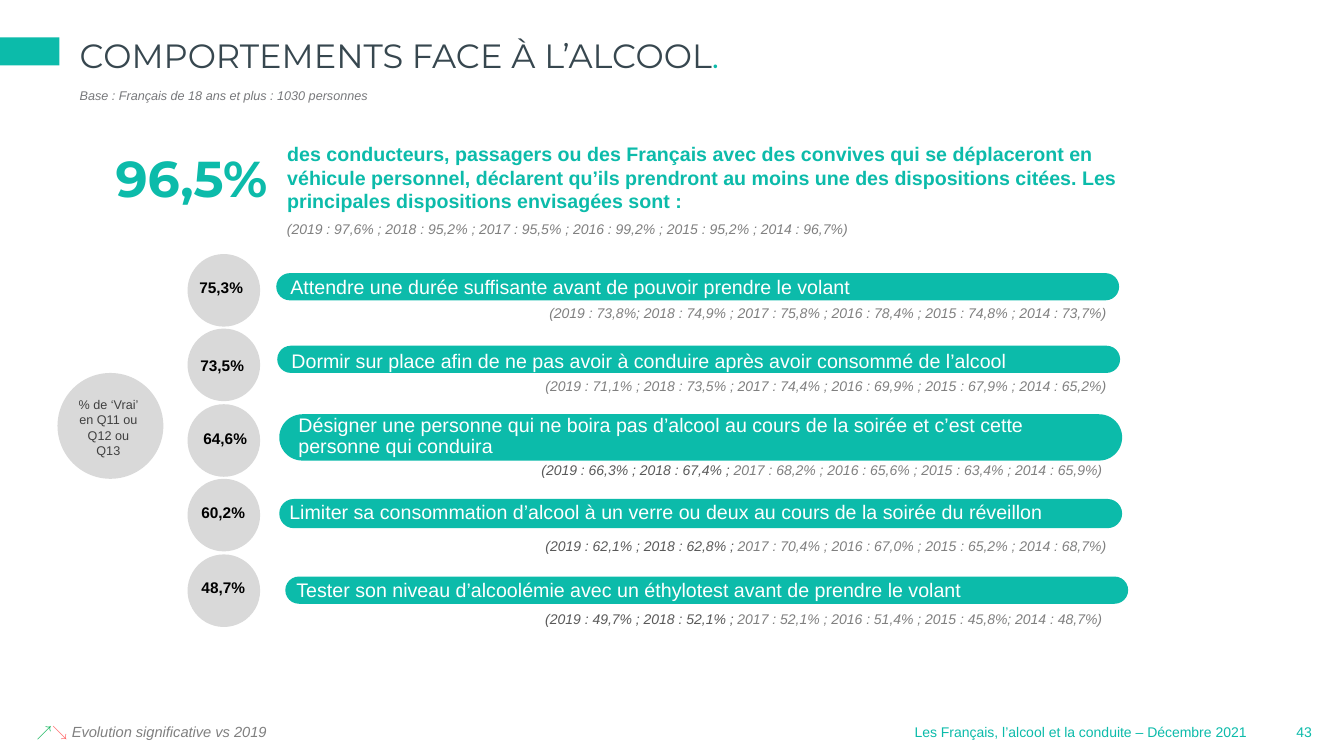
"""Build the slide on drink-driving precautions among French drivers."""
from pptx import Presentation
from pptx.dml.color import RGBColor
from pptx.enum.shapes import MSO_SHAPE
from pptx.enum.text import MSO_ANCHOR, MSO_AUTO_SIZE, PP_ALIGN
from pptx.util import Emu, Pt

PX = 9144
TEAL = RGBColor(0x0C, 0xBB, 0xAA)
SLATE = RGBColor(0x37, 0x47, 0x4F)
BASE_GREY = RGBColor(0x77, 0x78, 0x7B)
DISC_GREY = RGBColor(0xD9, 0xD9, 0xD9)
GREY = RGBColor(0x80, 0x80, 0x80)
MID_GREY = RGBColor(0x7F, 0x7F, 0x7F)
DARK_GREY = RGBColor(0x59, 0x59, 0x59)
NOTE_GREY = RGBColor(0x40, 0x40, 0x40)
BLACK = RGBColor(0, 0, 0)
WHITE = RGBColor(0xFF, 0xFF, 0xFF)
GREEN = RGBColor(0x00, 0xB0, 0x50)
RED = RGBColor(0xFF, 0x58, 0x59)

NO_INSETS = (0, 0, 0, 0)
BOX_INSETS = (10, 5, 10, 5)
LABEL_INSETS = (45, 4, 4, 4)
LEFT, CENTER, RIGHT = PP_ALIGN.LEFT, PP_ALIGN.CENTER, PP_ALIGN.RIGHT
TOP, MIDDLE = MSO_ANCHOR.TOP, MSO_ANCHOR.MIDDLE

prs = Presentation()
prs.slide_width, prs.slide_height = Emu(1333 * PX), Emu(750 * PX)
slide = prs.slides.add_slide(prs.slide_layouts[5])


def add_fill(preset, box, color):
    shape = slide.shapes.add_shape(preset, *(Emu(v * PX) for v in box))
    shape.shadow.inherit = False
    shape.fill.solid()
    shape.fill.fore_color.rgb = color
    shape.line.fill.background()
    return shape


def write(box, runs, size, align=LEFT, anchor=TOP, insets=BOX_INSETS, wrap=True,
          spacing=1.0, holder=None, name="Arial", **style):
    left, top, width, height = (Emu(v * PX) for v in box)
    holder = holder or slide.shapes.add_textbox(left, top, width, height)
    holder.left, holder.top, holder.width, holder.height = left, top, width, height
    frame = holder.text_frame
    sides = ("margin_left", "margin_top", "margin_right", "margin_bottom")
    frame_format = {side: Emu(v * PX) for side, v in zip(sides, insets)}
    frame_format.update(word_wrap=wrap, auto_size=MSO_AUTO_SIZE.NONE, vertical_anchor=anchor)
    for key, value in frame_format.items():
        setattr(frame, key, value)
    paragraph = frame.paragraphs[0]
    paragraph.alignment, paragraph.line_spacing = align, spacing
    for words, color, *override in runs:
        run = paragraph.add_run()
        run.text = words
        font_format = {"name": name, "size": Pt(size), **style, **dict(*override)}
        for key, value in font_format.items():
            setattr(run.font, key, value)
        run.font.color.rgb = color


write((1271, 713, 45, 27), [("43", TEAL)], 10, CENTER, wrap=False)
write((894, 713, 352, 27),
      [("Les Français, l’alcool et la conduite – Décembre 2021", TEAL)], 10, RIGHT, wrap=False)
add_fill(MSO_SHAPE.RECTANGLE, (0, 37, 59, 28), TEAL)
write((79, 31, 1181, 47), [("COMPORTEMENTS FACE À L’ALCOOL", SLATE), (".", TEAL)], 24,
      anchor=MIDDLE, insets=NO_INSETS, holder=slide.shapes.title, name="Montserrat")
write((79, 87, 1181, 20), [("Base : Français de 18 ans et plus : 1030 personnes", BASE_GREY)],
      9, insets=NO_INSETS, italic=True)

write((79, 141, 196, 71), [("96,5%", TEAL)], 36, RIGHT, name="Montserrat", bold=True)
write((275, 136, 882, 81), [(
    "des conducteurs, passagers ou des Français avec des convives qui se déplaceront en "
    "véhicule personnel, déclarent qu’ils prendront au moins une des dispositions citées. "
    "Les principales dispositions envisagées sont :", TEAL)], 14, bold=True)
write((275, 214, 579, 27), [
    ("(2019 : 97,6% ; 2018 : 95,2% ; ", GREY), ("2017 : 95,5% ; ", MID_GREY),
    ("2016 : 99,2% ; 2015 : 95,2% ; 2014 : 96,7%) ", GREY)], 10, CENTER, wrap=False, italic=True)

measures = [
    ("75,3% ", (182, 271), (274, 271, 27),
     "Attendre une durée suffisante avant de pouvoir prendre le volant",
     (243, 272, 828, 28), 0.9, (1097, 302), GREY,
     "(2019 : 73,8%; 2018 : 74,9% ; ", "2017 : 75,8% ; ",
     "2016 : 78,4% ; 2015 : 74,8% ; 2014 : 73,7%)"),
    ("73,5% ", (183, 348), (275, 343, 27),
     "Dormir sur place afin de ne pas avoir à conduire après avoir consommé de l’alcool",
     (244, 345, 795, 28), 0.9, (1097, 374), GREY,
     "(2019 : 71,1% ; 2018 : 73,5% ; ", "2017 : 74,4% ; ",
     "2016 : 69,9% ; 2015 : 67,9% ; 2014 : 65,2%)"),
    ("64,6% ", (186, 421), (277, 411, 46),
     "Désigner une personne qui ne boira pas d’alcool au cours de la soirée et c’est cette "
     "personne qui conduira",
     (251, 385, 801, 97), 0.9, (1093, 458), DARK_GREY,
     "(2019 : 66,3% ; 2018 : 67,4% ; ", "2017 : 68,2% ; ",
     "2016 : 65,6% ; 2015 : 63,4% ; 2014 : 65,9%)"),
    ("60,2% ", (184, 494), (277, 495, 29),
     "Limiter sa consommation d’alcool à un verre ou deux au cours de la soirée du réveillon",
     (242, 488, 827, 43), 0.9, (1097, 533), DARK_GREY,
     "(2019 : 62,1% ; 2018 : 62,8% ; ", "2017 : 70,4% ; ",
     "2016 : 67,0% ; 2015 : 65,2% ; 2014 : 68,7%)"),
    ("48,7%", (182, 569), (283, 572, 27),
     "Tester son niveau d’alcoolémie avec un éthylotest avant de prendre le volant",
     (249, 560, 853, 50), 1.0, (1093, 606), DARK_GREY,
     "(2019 : 49,7% ; 2018 : 52,1% ; ", "2017 : 52,1% ; ",
     "2016 : 51,4% ; 2015 : 45,8%; 2014 : 48,7%)"),
]
for row, (share, share_at, bar_at, label, label_box, spacing, history_at, recent_color,
          recent, middle, older) in enumerate(measures):
    add_fill(MSO_SHAPE.OVAL, (186, 252 + 149 * row // 2, 72, 72), DISC_GREY)
    bar_left, bar_top, bar_height = bar_at
    bar = add_fill(MSO_SHAPE.ROUNDED_RECTANGLE, (bar_left, bar_top, 836, bar_height), TEAL)
    bar.adjustments[0] = 0.5
    write(label_box, [(label, WHITE)], 14, anchor=MIDDLE, insets=LABEL_INSETS, spacing=spacing)
    history_right, history_top = history_at
    write((530, history_top, history_right - 530, 17),
          [(recent, recent_color), (middle, MID_GREY), (older, GREY)],
          10, RIGHT, MIDDLE, NO_INSETS, italic=True)
    write((*share_at, 79, 29), [(share, BLACK)], 11, CENTER, bold=True)

add_fill(MSO_SHAPE.OVAL, (57, 370, 105, 105), DISC_GREY)
write((64, 389, 87, 71), [("% de ‘Vrai’ en Q11 ou Q12 ou Q13", NOTE_GREY)], 9, CENTER)
write((11, 711, 279, 29), [
    ("↗", GREEN), ("↘ ", RED),
    ("Evolution significative vs 2019", GREY, {"size": Pt(10.5), "italic": True})], 11, CENTER)

prs.save("out.pptx")
